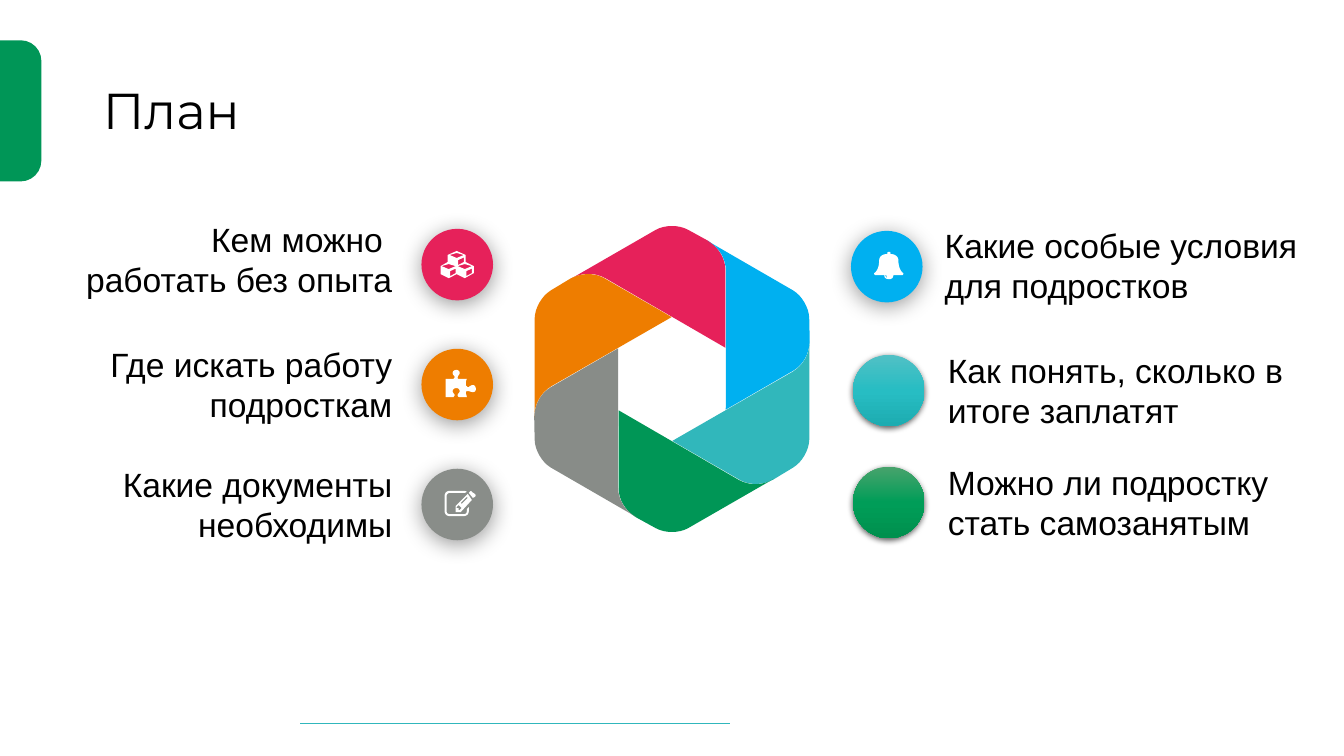
"""Build the plan slide: six topics around a six-blade hexagon."""
import copy
import math

import pptx
import pptx.util
import pptx.oxml
import pptx.oxml.ns
import pptx.dml.color
import pptx.enum.shapes
import pptx.enum.text

COLS, ROWS = 1333, 750
CELL = pptx.util.Inches(0.01)
DOT = 71
HUES = {
    "pink": "E6215A", "blue": "00B0F0", "teal": "31B7BB",
    "green": "009656", "gray": "888C88", "orange": "EE7D00",
    "tab": "009657", "rule": "30B7BC", "dot gray": "898D89",
    "white": "FFFFFF", "black": "000000",
    "teal 1": "51C0C5", "teal 2": "27BDC3", "teal 3": "1DACB1",
    "green 1": "47A36C", "green 2": "009D58", "green 3": "00904E",
}
SOFT, TIGHT = (40, 16, 3), (63, 4.5, 1.5)
BLADE = [[(53, -108), (53, -119, 47, -130, 36, -137), (16, -148),
          (7, -153, -7, -153, -16, -148), (-101, -99),
          (-90, -106, -77, -106, -66, -100), (53, -31)]]
CUBES = [[(52, 44), (43, 49), (35, 45), (27, 49), (19, 45), (19, 37),
          (26, 33), (26, 26), (35, 22), (44, 26), (44, 33), (52, 37)]]
FACES = [[(0, 2), (7, 4), (0, 7), (-7, 4)], [(7, 11), (7, 6.5), (1.5, 9), (1.5, 14)]]
CUBES += [[(x + dx, y + dy) for dx, dy in face]
          for x, y in [(35, 22), (27, 33), (43, 33)] for face in FACES]
PUZZLE = [[(51, 43), (49, 43, 48, 42, 46, 42), (45, 42, 44, 42, 44, 44),
           (44, 45, 45, 46, 45, 48), (39, 48), (37, 48, 36, 48, 36, 46),
           (36, 44, 38, 44, 38, 42), (38, 40, 36, 39, 35, 39),
           (33, 39, 31, 40, 31, 42), (31, 44, 33, 45, 33, 46),
           (33, 47, 32, 47, 32, 48), (24, 48), (24, 30), (32, 30),
           (32, 29, 33, 29, 33, 28), (33, 27, 31, 26, 31, 24),
           (31, 22, 33, 21, 35, 21), (36, 21, 38, 22, 38, 24),
           (38, 26, 36, 26, 36, 29), (36, 30, 37, 30, 39, 30),
           (45, 30), (44, 32, 44, 34, 44, 35), (44, 36, 44, 37, 45, 37),
           (45, 38, 46, 38, 47, 38), (47, 38, 49, 36, 51, 36),
           (53, 36, 54, 38, 54, 40), (54, 42, 53, 43, 51, 43)]]
BELL = [[(50, 44), (42, 44), (42, 47, 40, 48, 38, 48), (35, 48, 33, 47, 33, 44),
         (25, 44), (24, 44, 23, 44, 23, 42), (25, 41, 28, 37, 28, 29),
         (28, 26, 31, 23, 36, 23), (36, 22), (36, 21, 37, 21, 38, 21),
         (39, 21, 39, 21, 39, 22), (39, 23), (44, 23, 47, 26, 47, 29),
         (47, 37, 50, 41, 52, 42), (52, 44, 51, 44, 50, 44)],
        [(38, 47), (36, 47, 35, 45, 35, 44), (34, 44), (34, 46, 36, 47, 38, 47)]]
PENCIL = [[(47, 42), (47, 45, 45, 47, 42, 47), (28, 47), (25, 47, 23, 45, 23, 42),
           (23, 27), (23, 24, 25, 22, 28, 22), (42, 22), (43, 22, 44, 22, 45, 23),
           (43, 24), (28, 24), (26, 24, 25, 26, 25, 27), (25, 42),
           (25, 44, 26, 45, 28, 45), (42, 45), (44, 45, 45, 44, 45, 42),
           (45, 40), (47, 38)],
          [(50, 31), (39, 43), (34, 43), (34, 37), (46, 25)],
          [(40, 39), (37, 36), (35, 38), (35, 39), (37, 39), (37, 41), (38, 41)],
          [(45, 28), (39, 34), (40, 35), (46, 29)],
          [(51, 29), (47, 24), (48, 23), (48, 22, 50, 22, 50, 23), (53, 25),
           (54, 26, 54, 27, 53, 28)]]
LEFT, RIGHT = pptx.enum.text.PP_ALIGN.LEFT, pptx.enum.text.PP_ALIGN.RIGHT
TOPICS = [
    ("Кем можно \nработать без опыта", (18, 217, 371), RIGHT,
     (418, 227), ["pink"], SOFT, CUBES),
    ("Где искать работу подросткам", (67, 341, 322), RIGHT,
     (418, 346), ["orange"], SOFT, PUZZLE),
    ("Какие документы необходимы", (80, 460, 309), RIGHT,
     (418, 465), ["dot gray"], SOFT, PENCIL),
    ("Какие особые условия для подростков", (937, 223, 353), LEFT,
     (844, 229), ["blue"], SOFT, BELL),
    ("Как понять, сколько в итоге заплатят", (940, 347, 351), LEFT,
     (846, 352), ["teal 1", "teal 2", "teal 3"], TIGHT, None),
    ("Можно ли подростку стать самозанятым", (940, 458, 351), LEFT,
     (846, 463), ["green 1", "green 2", "green 3"], TIGHT, None),
]


def hue(name):
    """Return the named colour."""
    return pptx.dml.color.RGBColor.from_string(HUES[name])


def grid(*cells):
    """Turn grid cells into slide lengths."""
    return [round(c * CELL) for c in cells]


def paint(shape, name):
    """Give a shape a flat fill without line or shadow."""
    shape.shadow.inherit = False
    shape.fill.solid()
    shape.fill.fore_color.rgb = hue(name)
    shape.line.fill.background()


def blend(shape, names):
    """Give a shape a three-stop fill from top to bottom."""
    shape.fill.gradient()
    shape.fill.gradient_angle = 270
    stops = shape._element.spPr.find(".//" + pptx.oxml.ns.qn("a:gsLst"))
    stops.insert(1, copy.deepcopy(stops[0]))
    for i, (stop, name) in enumerate(zip(shape.fill.gradient_stops, names)):
        stop.position = i / 2
        stop.color.rgb = hue(name)


def shade(shape, alpha, blur, drop):
    """Cast a soft shadow straight down."""
    glow = shape._element.spPr.find(pptx.oxml.ns.qn("a:effectLst"))
    glow.append(pptx.oxml.parse_xml(
        f'<a:outerShdw {pptx.oxml.ns.nsdecls("a")} blurRad="{pptx.util.Pt(blur)}" '
        f'dist="{pptx.util.Pt(drop)}" dir="5400000" algn="t" rotWithShape="0">'
        f'<a:srgbClr val="{HUES["black"]}"><a:alpha val="{alpha * 1000}"/></a:srgbClr>'
        '</a:outerShdw>'))


def trace(loop, steps=8):
    """Flatten one loop of lines and cubic curves into points."""
    dots = [loop[0]]
    for part in loop[1:]:
        if len(part) == 2:
            dots.append(part)
            continue
        knots = [dots[-1], part[:2], part[2:4], part[4:]]
        for i in range(1, steps + 1):
            t = i / steps
            mix = [math.comb(3, k) * t ** k * (1 - t) ** (3 - k) for k in range(4)]
            dots.append(tuple(sum(m * p[a] for m, p in zip(mix, knots)) for a in (0, 1)))
    return dots


def draw(shapes, loops, left, top, name, turn=0):
    """Draw loops moved to a grid place and turned by degrees."""
    c, s = math.cos(math.radians(turn)), math.sin(math.radians(turn))
    pen = None
    for loop in loops:
        dots = [grid(left + x * c - y * s, top + x * s + y * c) for x, y in trace(loop)]
        if pen:
            pen.move_to(*dots[0])
        else:
            pen = shapes.build_freeform(*dots[0], scale=1.0)
        pen.add_line_segments(dots[1:], close=True)
    paint(pen.convert_to_shape(), name)


def style(text, size, face, align):
    """Format all paragraphs of a text frame."""
    text.word_wrap = True
    for para in text.paragraphs:
        para.alignment = align
        for run in para.runs:
            run.font.size = pptx.util.Pt(size)
            run.font.name = face
            run.font.color.rgb = hue("black")


def label(slide, words, place, align):
    """Add a topic label."""
    left, top, width = place
    box = slide.shapes.add_textbox(*grid(left, top, width, 81))
    text = box.text_frame
    text.margin_left = text.margin_right = text.margin_top = text.margin_bottom = 0
    text.text = words
    text.auto_size = pptx.enum.text.MSO_AUTO_SIZE.SHAPE_TO_FIT_TEXT
    style(text, 24, "Arial", align)


def badge(slide, place, names, glow, icon):
    """Add a round dot with its icon."""
    oval = pptx.enum.shapes.MSO_SHAPE.OVAL
    dot = slide.shapes.add_shape(oval, *grid(*place, DOT, DOT))
    paint(dot, names[0])
    if len(names) > 1:
        blend(dot, names)
    shade(dot, *glow)
    if icon:
        draw(slide.shapes, icon, *place, "white")


def frame(slide):
    """Add the foot rule and the side tab."""
    rule = slide.shapes.add_connector(
        pptx.enum.shapes.MSO_CONNECTOR.STRAIGHT, *grid(298, 718, 724, 718))
    rule.line.color.rgb = hue("rule")
    rule.line.width = pptx.util.Pt(0.75)
    rule._element.spPr.append(pptx.oxml.parse_xml(
        f'<a:effectLst {pptx.oxml.ns.nsdecls("a")}/>'))
    kind = pptx.enum.shapes.MSO_SHAPE.ROUND_2_SAME_RECTANGLE
    tab = slide.shapes.add_shape(kind, *grid(-49.5, 89.5, 140, 41))
    tab.rotation = 90
    tab.adjustments[0], tab.adjustments[1] = 0.5, 0
    paint(tab, "tab")


def head(slide, words):
    """Fill and place the title."""
    title = slide.shapes.title
    title.left, title.top, title.width, title.height = grid(92, 40, 1150, 145)
    text = title.text_frame
    text.text = words
    text.auto_size = pptx.enum.text.MSO_AUTO_SIZE.NONE
    text.vertical_anchor = pptx.enum.text.MSO_ANCHOR.MIDDLE
    text.paragraphs[0].line_spacing = 0.9
    style(text, 36, "Montserrat", LEFT)


def main():
    """Build and save the slide."""
    deck = pptx.Presentation()
    deck.slide_width, deck.slide_height = grid(COLS, ROWS)
    slide = deck.slides.add_slide(deck.slide_layouts[5])
    frame(slide)
    head(slide, "План")
    for words, spot, align, place, names, glow, icon in TOPICS:
        label(slide, words, spot, align)
        badge(slide, place, names, glow, icon)
    wheel = slide.shapes.add_group_shape()
    for i, name in enumerate(["pink", "blue", "teal", "green", "gray", "orange"]):
        draw(wheel.shapes, BLADE, COLS / 2, 376, name, 60 * i)
    deck.save("out.pptx")


if __name__ == "__main__":
    main()
